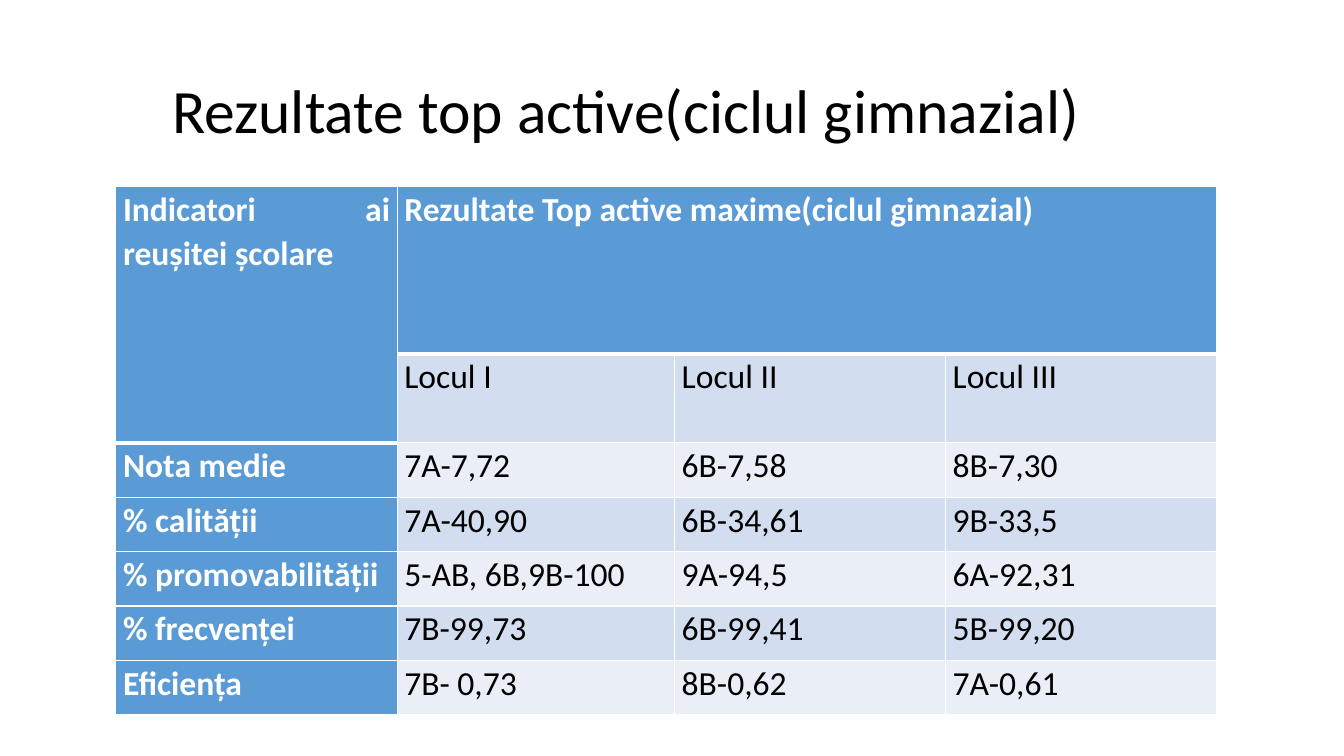
import lxml.etree
import pptx
import pptx.dml.color
import pptx.enum.text
import pptx.oxml.ns
import pptx.util

Cm = pptx.util.Cm
Pt = pptx.util.Pt
ALIGN = pptx.enum.text.PP_ALIGN

COLORS = {
    "black": "000000",
    "white": "FFFFFF",
    "header": "5B9BD5",
    "band_dark": "D2DEEF",
    "band_light": "EAEFF7",
}


def write_text(text_frame, text, size=24, color="black", bold=False,
               align=ALIGN.JUSTIFY, line_spacing=1.07):
    text_frame.word_wrap = True
    paragraph = text_frame.paragraphs[0]
    paragraph.alignment = align
    paragraph.line_spacing = line_spacing
    run = paragraph.add_run()
    run.text = text
    run.font.name = "Calibri"
    run.font.size = Pt(size)
    run.font.bold = bold
    run.font.color.rgb = pptx.dml.color.RGBColor.from_string(COLORS[color])


def set_borders(cell, widths):
    """Draw white cell edges; widths maps L, R, T, B to points."""
    properties = cell._tc.get_or_add_tcPr()
    for side, width in widths.items():
        line = lxml.etree.SubElement(
            properties, pptx.oxml.ns.qn(f"a:ln{side}"), w=str(Pt(width)))
        fill = lxml.etree.SubElement(line, pptx.oxml.ns.qn("a:solidFill"))
        lxml.etree.SubElement(
            fill, pptx.oxml.ns.qn("a:srgbClr"), val=COLORS["white"])


presentation = pptx.Presentation()
presentation.slide_width = Cm(33.87)
presentation.slide_height = Cm(19.05)
slide = presentation.slides.add_slide(presentation.slide_layouts[6])

# Title
title = slide.shapes.add_textbox(Cm(2.33), Cm(1.02), Cm(29.21), Cm(3.68))
title.text_frame.vertical_anchor = pptx.enum.text.MSO_ANCHOR.MIDDLE
title.text_frame.margin_left = Cm(2.01)
write_text(title.text_frame, "Rezultate top active(ciclul gimnazial)",
           size=44, align=ALIGN.LEFT, line_spacing=0.9)

# Table content; None marks cells covered by a merged header
rows = [
    ["Indicatori ai reușitei școlare",
     "Rezultate Top active maxime(ciclul gimnazial)", None, None],
    [None, "Locul I", "Locul II", "Locul III"],
    ["Nota medie", "7A-7,72", "6B-7,58", "8B-7,30"],
    ["% calității", "7A-40,90", "6B-34,61", "9B-33,5"],
    ["% promovabilității", "5-AB, 6B,9B-100", "9A-94,5", "6A-92,31"],
    ["% frecvenței", "7B-99,73", "6B-99,41", "5B-99,20"],
    ["Eficiența", "7B- 0,73", "8B-0,62", "7A-0,61"],
]
column_widths = [7.09, 6.99, 6.83, 6.83]
row_heights = [4.22, 2.24] + [1.37] * 5

# Table grid
table = slide.shapes.add_table(
    len(rows), len(column_widths), Cm(2.92), Cm(4.7),
    Cm(sum(column_widths)), Cm(sum(row_heights))).table
for column, width in zip(table.columns, column_widths):
    column.width = Cm(width)
for row, height in zip(table.rows, row_heights):
    row.height = Cm(height)
table.cell(0, 0).merge(table.cell(1, 0))
table.cell(0, 1).merge(table.cell(0, 3))

# Cells: header row and column in blue, the rest in bands
for row_index, texts in enumerate(rows):
    for column_index, text in enumerate(texts):
        cell = table.cell(row_index, column_index)
        is_header = row_index == 0 or column_index == 0
        cell.margin_left = cell.margin_right = Cm(0.18)
        cell.margin_top = cell.margin_bottom = Cm(0)

        # A thick rule runs below the merged headers
        below_header = row_index == (2 if column_index == 0 else 1)
        ends_header = row_index == 0 or (row_index == 1 and column_index == 0)
        set_borders(cell, {"L": 1, "R": 1,
                           "T": 3 if below_header else 1,
                           "B": 3 if ends_header else 1})

        band = "band_dark" if row_index % 2 else "band_light"
        cell.fill.solid()
        cell.fill.fore_color.rgb = pptx.dml.color.RGBColor.from_string(
            COLORS["header" if is_header else band])
        if text:
            write_text(cell.text_frame, text, bold=is_header,
                       color="white" if is_header else "black")

presentation.save("out.pptx")
